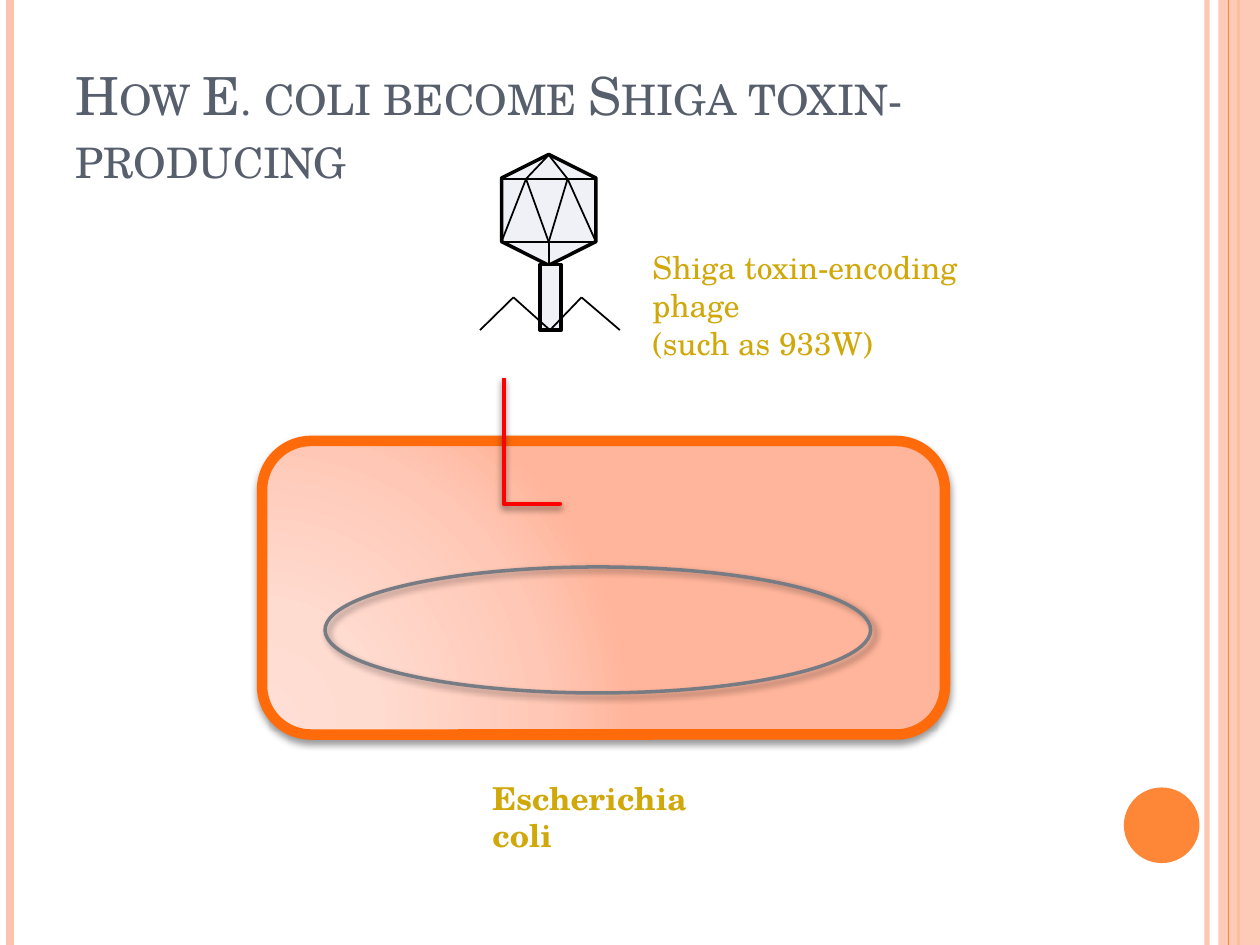
import lxml.etree
import pptx
import pptx.dml.color
import pptx.enum.shapes
import pptx.enum.text
import pptx.oxml
import pptx.oxml.ns
import pptx.util
from pptx.dml.color import RGBColor
from pptx.util import Inches

FONT = "TeX Gyre Schola"
BLACK = RGBColor(0x00, 0x00, 0x00)
RED = RGBColor(0xFF, 0x00, 0x00)
PEACH = RGBColor(0xFE, 0xC3, 0xAE)
ORANGE = RGBColor(0xFE, 0x86, 0x37)
MEMBRANE = RGBColor(0xFF, 0x6B, 0x0A)
GREY = RGBColor(0x77, 0x7C, 0x84)
SLATE = RGBColor(0x57, 0x5F, 0x6D)
GOLD = RGBColor(0xD0, 0xA8, 0x0A)
CAPSID = RGBColor(0xEF, 0xF1, 0xF7)
CYTOPLASM = ((0, RGBColor(0xFF, 0xDE, 0xD5)), (30, RGBColor(0xFF, 0xDB, 0xD0)),
             (75, RGBColor(0xFF, 0xC8, 0xB6)), (100, RGBColor(0xFF, 0xB5, 0x9B)))

PRESETS = pptx.enum.shapes.MSO_SHAPE
ANCHORS = pptx.enum.text.MSO_ANCHOR
qn = pptx.oxml.ns.qn


def set_alpha(fill_element, percent):
    color = fill_element.find(".//" + qn("a:srgbClr"))
    lxml.etree.SubElement(color, qn("a:alpha"), val=str(percent * 1000))


def style_shape(shape, fill=None, line=None, weight=1):
    shape.shadow.inherit = False
    if fill is None:
        shape.fill.background()
    else:
        shape.fill.solid()
        shape.fill.fore_color.rgb = fill
    if line is None:
        shape.line.fill.background()
    else:
        shape.line.color.rgb = line
        shape.line.width = pptx.util.Pt(weight)


def add_preset(shapes, preset, left, top, width, height, **style):
    shape = shapes.add_shape(preset, Inches(left), Inches(top), Inches(width), Inches(height))
    style_shape(shape, **style)
    return shape


def add_line(shapes, start, end, color=BLACK, weight=1):
    line = shapes.add_connector(pptx.enum.shapes.MSO_CONNECTOR.STRAIGHT,
                                *(Inches(value) for value in (*start, *end)))
    line.line.color.rgb = color
    line.line.width = pptx.util.Pt(weight)
    lxml.etree.SubElement(line._element.spPr, qn("a:effectLst"))
    return line


def add_text(shapes, paragraphs, left, top, width, height, size=18, color=GOLD,
             bold=False, small_caps=False, anchor=ANCHORS.TOP):
    box = shapes.add_textbox(Inches(left), Inches(top), Inches(width), Inches(height))
    frame = box.text_frame
    frame.word_wrap = True
    frame.vertical_anchor = anchor
    frame.text = "\n".join(paragraphs)
    for paragraph in frame.paragraphs:
        run = paragraph.runs[0]
        run.font.name = FONT
        run.font.size = pptx.util.Pt(size)
        run.font.color.rgb = color
        run.font.bold = bold
        if small_caps:
            run.font._element.set("cap", "small")


def add_shadow(shape, distance, direction, alpha=40):
    effects = shape._element.spPr.find(qn("a:effectLst"))
    shadow = lxml.etree.SubElement(
        effects, qn("a:outerShdw"), blurRad=str(pptx.util.Pt(4)),
        dist=str(pptx.util.Pt(distance)), dir=str(direction * 60000), rotWithShape="0")
    lxml.etree.SubElement(shadow, qn("a:srgbClr"), val=str(BLACK))
    set_alpha(shadow, alpha)


def set_radial_gradient(shape, stops):
    properties = shape._element.spPr
    gradient = lxml.etree.Element(qn("a:gradFill"), rotWithShape="1")
    stop_list = lxml.etree.SubElement(gradient, qn("a:gsLst"))
    for position, color in stops:
        stop = lxml.etree.SubElement(stop_list, qn("a:gs"), pos=str(position * 1000))
        lxml.etree.SubElement(stop, qn("a:srgbClr"), val=str(color))
    circle = lxml.etree.SubElement(gradient, qn("a:path"))
    circle.set("path", "circle")
    lxml.etree.SubElement(circle, qn("a:fillToRect"), l="5000", t="100000", r="120000", b="10000")
    properties.replace(properties.find(qn("a:noFill")), gradient)


def add_curve(shapes, points, color, weight):
    """Draw a Bezier chain: a start point, then two controls and an end per segment."""
    builder = shapes.build_freeform(*points[0], scale=Inches(1))
    builder.add_line_segments(points[1:], close=False)
    shape = builder.convert_to_shape()
    segments = list(shape._element.iter(qn("a:lnTo")))
    for index in range(0, len(segments), 3):
        curve = lxml.etree.Element(qn("a:cubicBezTo"))
        segments[index].addprevious(curve)
        for segment in segments[index:index + 3]:
            curve.append(segment[0])
            segment.getparent().remove(segment)
    style_shape(shape, line=color, weight=weight)
    return shape


def draw_frame(shapes, width, height):
    def add_rule(x, color, weight):
        return add_line(shapes, (x, 0), (x, height), color, weight)

    inner_rule = add_rule(width - 0.42, PEACH, 3)
    set_alpha(inner_rule._element.spPr.find(qn("a:ln")), 93)
    add_rule(0.08, PEACH, 4.5)
    add_rule(width - 0.17, ORANGE, 1.5)
    band = add_preset(shapes, PRESETS.RECTANGLE, width - 0.33, 0, 0.33, height, fill=PEACH)
    set_alpha(band._element.spPr.find(qn("a:solidFill")), 87)
    add_rule(width - 0.25, ORANGE, 0.75)
    add_preset(shapes, PRESETS.OVAL, width - 1.08, height - 1.25, 0.6, 0.6, fill=ORANGE)


def draw_cell(shapes, left, top, width, height):
    cell = add_preset(shapes, PRESETS.ROUNDED_RECTANGLE, left, top, width, height,
                      line=MEMBRANE, weight=6)
    set_radial_gradient(cell, CYTOPLASM)
    add_shadow(cell, distance=2, direction=90)
    chromosome = add_preset(shapes, PRESETS.OVAL, left + 0.5, top + 1, width - 1.09, 1,
                            line=GREY, weight=2)
    add_shadow(chromosome, distance=3, direction=45)
    add_text(shapes, ["Escherichia coli"], left + 1.73, top + height + 0.3, 2.12, 0.4, bold=True)


def draw_phage(shapes, left, top, width, height):
    parts = shapes.add_group_shape().shapes
    middle = left + width / 2
    head_width, head_height = 0.75, 0.88
    head = add_preset(parts, PRESETS.HEXAGON, middle - 0.45, top + 0.06,
                      head_height, head_width, fill=CAPSID, line=BLACK, weight=2)
    head.rotation = 90

    center = middle - 0.01
    upper, lower, neck = top + 0.19, top + 0.69, top + 0.87
    west, east = center - head_width / 2, center + head_width / 2
    apex, base = (center, top), (center, lower)
    facet_west, facet_east = (center - 0.18, upper), (center + 0.15, upper)
    facets = [((west, upper), (east, upper)), ((west, lower), (east, lower)),
              ((center, neck), base), (base, facet_east), ((east, lower), facet_east),
              ((west, lower), facet_west), (base, facet_west),
              (facet_west, apex), (facet_east, apex)]
    for start, end in facets:
        add_line(parts, start, end)

    bottom = top + height
    add_preset(parts, PRESETS.RECTANGLE, middle - 0.08, neck, 0.17, bottom - neck,
               fill=CAPSID, line=BLACK, weight=2)
    for knee_x, foot_x in ((middle + 0.25, left + width), (middle - 0.29, left)):
        knee = (knee_x, bottom - 0.26)
        add_line(parts, (middle, bottom), knee)
        add_line(parts, knee, (foot_x, bottom))


def draw_injected_dna(shapes, left, top):
    offsets = [(0.19, 0), (0.1, 0.07), (0.01, 0.15), (0.02, 0.21),
               (0.03, 0.27), (0.21, 0.32), (0.25, 0.37),
               (0.28, 0.42), (0.28, 0.48), (0.25, 0.52),
               (0.21, 0.55), (0.09, 0.55), (0.05, 0.58),
               (0.01, 0.61), (-0.02, 0.68), (0.02, 0.71),
               (0.06, 0.74), (0.24, 0.76), (0.29, 0.77),
               (0.34, 0.78), (0.33, 0.78), (0.32, 0.78)]
    strand = add_curve(shapes, [(left + x, top + y) for x, y in offsets], RED, 2.75)
    add_shadow(strand, distance=1.6, direction=90, alpha=42)


def main():
    presentation = pptx.Presentation()
    presentation.slide_width = Inches(10)
    presentation.slide_height = Inches(7.5)
    shapes = presentation.slides.add_slide(presentation.slide_layouts[6]).shapes

    draw_frame(shapes, 10, 7.5)
    add_text(shapes, ["How E. coli become Shiga toxin-producing"], 0.5, 0.3, 8.17, 1.25,
             size=30, color=SLATE, small_caps=True, anchor=ANCHORS.BOTTOM)
    draw_cell(shapes, 2.08, 3.5, 5.42, 2.33)
    draw_phage(shapes, 3.81, 1.23, 1.11, 1.39)
    draw_injected_dna(shapes, 4.17, 3.47)
    add_text(shapes, ["Shiga toxin-encoding phage", "(such as 933W)"], 5.08, 1.92, 3.33, 0.71)
    presentation.save("out.pptx")


if __name__ == "__main__":
    main()
